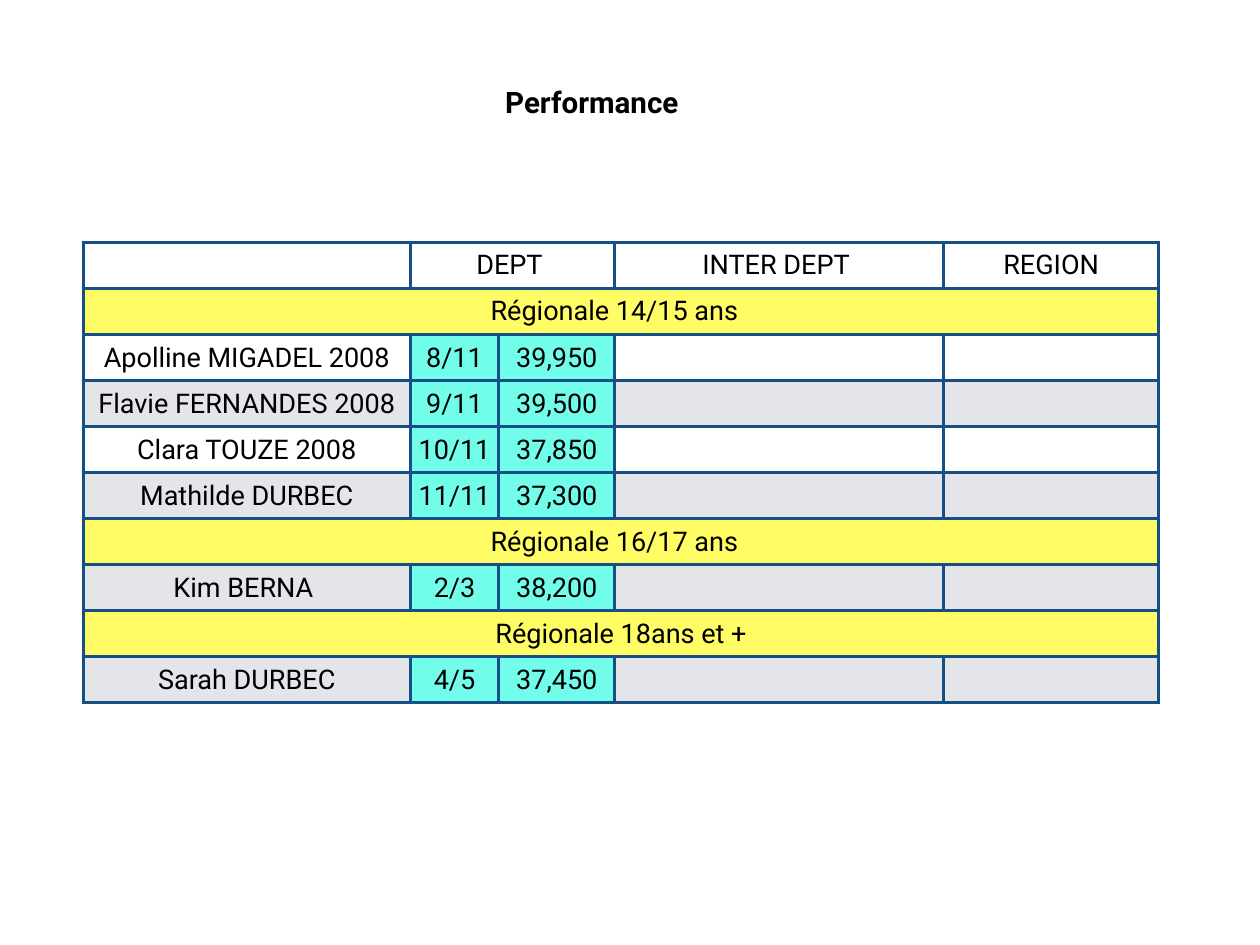
from pptx import Presentation
from pptx.dml.color import RGBColor
from pptx.enum.text import MSO_ANCHOR, MSO_AUTO_SIZE, PP_ALIGN
from pptx.oxml.ns import qn
from pptx.util import Pt
from lxml.etree import SubElement

TITLE = "Performance "
HEADER = ("", "DEPT ", "", "INTER DEPT ", "REGION")
GROUPS = [
    ("Régionale 14/15 ans  ", [
        ("Apolline MIGADEL 2008", "8/11", "39,950"),
        ("Flavie FERNANDES 2008", "9/11", "39,500"),
        ("Clara TOUZE 2008", "10/11", "37,850"),
        ("Mathilde DURBEC", "11/11", "37,300"),
    ]),
    ("Régionale 16/17 ans  ", [("Kim BERNA ", "2/3", "38,200")]),
    ("Régionale 18ans et +", [("Sarah DURBEC", "4/5", "37,450")]),
]

FONT = "Roboto"
BLACK, WHITE, GREY = "000000", "FFFFFF", "E3E5E8"
YELLOW, TURQUOISE, BLUE = "FFFC66", "72FDEA", "164F86"
COL_WIDTHS = (265.7, 72, 94.3, 267.1, 175)
ROW_HEIGHT = 37.4
TABLE_LEFT, TABLE_TOP = 67.7, 197.3
INSET = 4
BORDER = 3


def rgb(code):
    return RGBColor.from_string(code)


def write(tf, text, size, bold=False):
    p = tf.paragraphs[0]
    p.alignment = PP_ALIGN.CENTER
    r = p.add_run()
    r.text = text
    r.font.name, r.font.size, r.font.bold = FONT, Pt(size), bold
    r.font.color.rgb = rgb(BLACK)


def set_insets(box):
    box.margin_left = box.margin_right = Pt(INSET)
    box.margin_top = box.margin_bottom = Pt(INSET)
    box.vertical_anchor = MSO_ANCHOR.MIDDLE


def add_borders(cell):
    tc_pr = cell._tc.get_or_add_tcPr()
    for side in ("a:lnL", "a:lnR", "a:lnT", "a:lnB"):
        ln = SubElement(tc_pr, qn(side), w=str(Pt(BORDER)))
        SubElement(SubElement(ln, qn("a:solidFill")), qn("a:srgbClr"), val=BLUE)


def add_title(slide):
    sp = slide.shapes.title
    sp.left, sp.top, sp.width, sp.height = Pt(401.8), Pt(64.8), Pt(164.2), Pt(36)
    tf = sp.text_frame
    set_insets(tf)
    tf.word_wrap = False
    tf.auto_size = MSO_AUTO_SIZE.SHAPE_TO_FIT_TEXT
    write(tf, TITLE, 24, bold=True)


def add_results(slide):
    rows, group_rows = [HEADER], []
    for group, athletes in GROUPS:
        group_rows.append(len(rows))
        rows.append((group, "", "", "", ""))
        rows += [athlete + ("", "") for athlete in athletes]

    table = slide.shapes.add_table(
        len(rows), len(COL_WIDTHS), Pt(TABLE_LEFT), Pt(TABLE_TOP),
        Pt(sum(COL_WIDTHS)), Pt(ROW_HEIGHT * len(rows))).table
    table.first_row = table.horz_banding = False
    for column, width in zip(table.columns, COL_WIDTHS):
        column.width = Pt(width)

    for i, row in enumerate(rows):
        table.rows[i].height = Pt(ROW_HEIGHT)
        for j, text in enumerate(row):
            if i in group_rows:
                color = YELLOW
            elif i > 0 and j in (1, 2):
                color = TURQUOISE
            else:
                color = GREY if i % 2 else WHITE
            cell = table.cell(i, j)
            set_insets(cell)
            add_borders(cell)
            cell.fill.solid()
            cell.fill.fore_color.rgb = rgb(color)
            if text:
                write(cell.text_frame, text, 22)

    table.cell(0, 1).merge(table.cell(0, 2))
    for i in group_rows:
        table.cell(i, 0).merge(table.cell(i, len(COL_WIDTHS) - 1))


def main():
    prs = Presentation()
    prs.slide_width, prs.slide_height = Pt(1024), Pt(768)
    slide = prs.slides.add_slide(prs.slide_layouts[5])
    add_title(slide)
    add_results(slide)
    prs.save("out.pptx")


if __name__ == "__main__":
    main()
